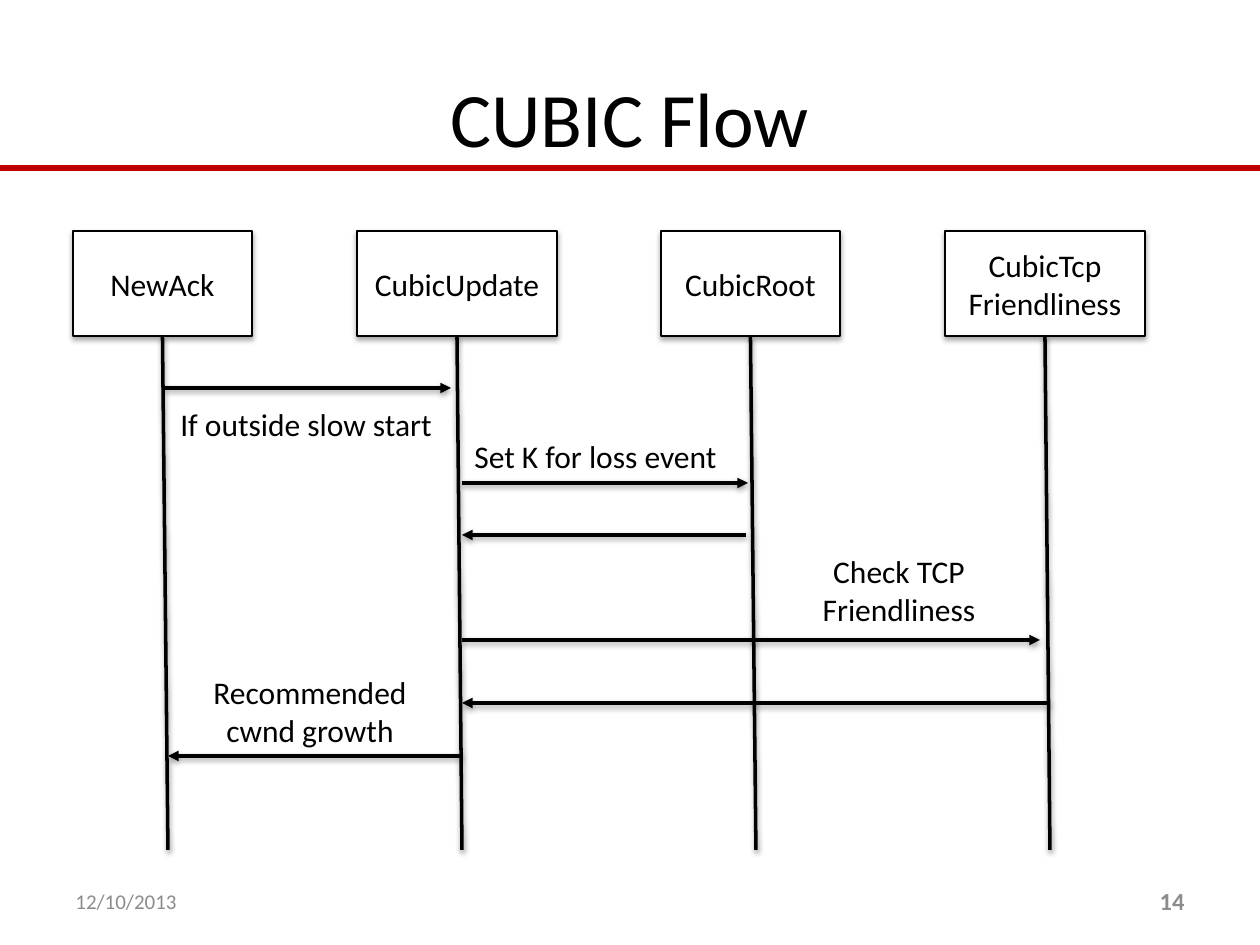
import pptx
import pptx.util
import pptx.dml.color
import pptx.enum.shapes
import pptx.enum.text
import pptx.oxml
import pptx.oxml.ns

PX = 914400 // 126
BLACK = pptx.dml.color.RGBColor(0, 0, 0)
WHITE = pptx.dml.color.RGBColor(255, 255, 255)
RED = pptx.dml.color.RGBColor(0xC0, 0, 0)
GRAY = pptx.dml.color.RGBColor(0x8C, 0x8C, 0x8C)
ALIGN = pptx.enum.text.PP_ALIGN
ANCHOR = pptx.enum.text.MSO_ANCHOR
NAMESPACE = pptx.oxml.ns.nsdecls("a")


def write(shape, text, size, color, align, anchor, bold=False, wrap=True):
    frame = shape.text_frame
    frame.text = text
    frame.word_wrap = wrap
    frame.vertical_anchor = anchor
    for para in frame.paragraphs:
        para.alignment = align
        para.font.name = "Calibri"
        para.font.size = pptx.util.Pt(size)
        para.font.bold = bold
        para.font.color.rgb = color


def add_shadow(shape, distance, opacity):
    shape._element.spPr.append(pptx.oxml.parse_xml(
        f'<a:effectLst {NAMESPACE}><a:outerShdw blurRad="40000" dist="{distance}" '
        f'dir="5400000" rotWithShape="0"><a:srgbClr val="000000">'
        f'<a:alpha val="{opacity}"/></a:srgbClr></a:outerShdw></a:effectLst>'))


deck = pptx.Presentation()
deck.slide_width = pptx.util.Inches(10)
deck.slide_height = pptx.util.Inches(7.5)
page = deck.slides.add_slide(deck.slide_layouts[5])
straight = pptx.enum.shapes.MSO_CONNECTOR.STRAIGHT

# Title
title = page.shapes.title
title.left, title.top, title.width, title.height = [v * PX for v in (63, 38, 1134, 157)]
write(title, "CUBIC Flow", 44, BLACK, ALIGN.CENTER, ANCHOR.MIDDLE)

# Header rule
rule = page.shapes.add_connector(straight, 0, 168 * PX, deck.slide_width, 168 * PX)
rule.line.color.rgb = RED
rule.line.width = pptx.util.Pt(3.25)
rule._element.spPr.append(pptx.oxml.parse_xml(f"<a:effectLst {NAMESPACE}/>"))

# Date and page number
for text, left, size, align, bold in [
    ("12/10/2013", 63, 12, ALIGN.LEFT, False),
    ("14", 903, 14, ALIGN.RIGHT, True),
]:
    box = page.shapes.add_textbox(left * PX, 876 * PX, 294 * PX, 50 * PX)
    write(box, text, size, GRAY, align, ANCHOR.MIDDLE, bold)

# Participants with their lifelines
for name, left, width, foot in [
    ("NewAck", 73, 179, 168),
    ("CubicUpdate", 357, 200, 462),
    ("CubicRoot", 661, 179, 756),
    ("CubicTcp\nFriendliness", 945, 200, 1050),
]:
    box = page.shapes.add_shape(pptx.enum.shapes.MSO_SHAPE.RECTANGLE,
                                left * PX, 231 * PX, width * PX, 105 * PX)
    box.fill.solid()
    box.fill.fore_color.rgb = WHITE
    box.line.color.rgb = BLACK
    box.line.width = pptx.util.Pt(0.75)
    add_shadow(box, 23000, 35000)
    write(box, name, 18, BLACK, ALIGN.CENTER, ANCHOR.MIDDLE)

    lifeline = page.shapes.add_connector(straight, 0, 0, foot * PX, 850 * PX)
    lifeline.begin_connect(box, 2)
    lifeline.line.color.rgb = BLACK
    lifeline.line.width = pptx.util.Pt(2)
    add_shadow(lifeline, 20000, 38000)

# Messages: start, end, height
for start, end, y in [
    (165, 451, 388),
    (462, 748, 483),
    (462, 1040, 640),
    (746, 462, 535),
    (1050, 462, 703),
    (462, 168, 756),
]:
    arrow = page.shapes.add_connector(straight, start * PX, y * PX, end * PX, y * PX)
    arrow.line.color.rgb = BLACK
    arrow.line.width = pptx.util.Pt(2)
    arrow.line._get_or_add_ln().append(
        pptx.oxml.parse_xml(f'<a:tailEnd {NAMESPACE} type="triangle"/>'))
    add_shadow(arrow, 20000, 38000)

# Message labels
for text, left, top, width, height, align, wrap in [
    ("If outside slow start", 168, 399, 281, 51, ALIGN.LEFT, False),
    ("Set K for loss event", 462, 431, 272, 51, ALIGN.LEFT, False),
    ("Check TCP\nFriendliness", 809, 546, 180, 89, ALIGN.CENTER, False),
    ("Recommended cwnd growth", 168, 667, 284, 89, ALIGN.CENTER, True),
]:
    label = page.shapes.add_textbox(left * PX, top * PX, width * PX, height * PX)
    write(label, text, 18, BLACK, align, ANCHOR.TOP, wrap=wrap)

deck.save("out.pptx")
